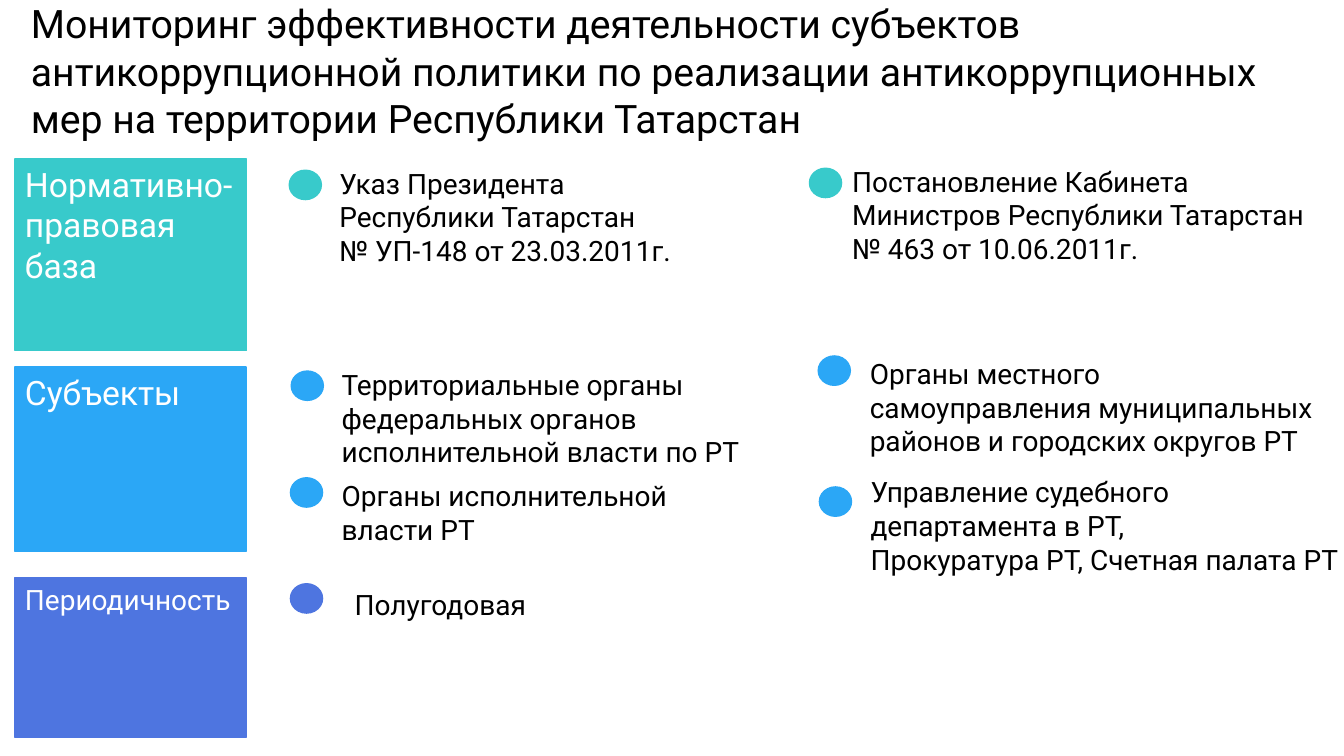
from pptx import Presentation
from pptx.dml.color import RGBColor
from pptx.enum.shapes import MSO_SHAPE
from pptx.enum.text import MSO_ANCHOR, PP_ALIGN
from pptx.util import Cm, Pt

RECT = MSO_SHAPE.RECTANGLE
SNIPPED = MSO_SHAPE.SNIP_2_DIAG_RECTANGLE
DOT = MSO_SHAPE.FLOWCHART_CONNECTOR
TOP = MSO_ANCHOR.TOP
MIDDLE = MSO_ANCHOR.MIDDLE
LEFT = PP_ALIGN.LEFT

FONT = "Roboto"
BLACK, WHITE = "000000", "FFFFFF"
TEAL, BLUE, INDIGO = "38CACB", "2BA7F6", "4E75E0"

TITLE = ("Мониторинг эффективности деятельности субъектов антикоррупционной "
         "политики по реализации антикоррупционных мер на территории "
         "Республики Татарстан")

SECTIONS = [
    ("Нормативно-правовая база", 4.01, 5.84, 4.83, 24, TEAL),
    ("Субъекты", 9.25, 5.82, 4.65, 24, BLUE),
    ("Периодичность", 14.55, 5.82, 4.04, 20, INDIGO),
]

DECREES = [
    ("Указ Президента\nРеспублики Татарстан\n№ УП-148 от 23.03.2011г.",
     7.98, 3.53, 11.76, 3.86),
    ("Постановление Кабинета Министров Республики Татарстан\n"
     "№ 463 от 10.06.2011г.",
     20.9, 3.45, 12.98, 3.91),
]

ITEMS = [
    ("Территориальные органы\nфедеральных органов\nисполнительной власти по РТ",
     8.36, 9.14, 14.53, 2.82),
    ("Органы исполнительной власти РТ", 8.36, 11.94, 10.31, 1.96),
    ("Органы местного самоуправления муниципальных районов "
     "и городских округов РТ",
     21.67, 8.86, 11.86, 3.68),
    ("Управление судебного департамента в РТ,\n"
     "Прокуратура РТ, Счетная палата РТ",
     21.69, 11.84, 12.32, 2.82),
    ("Полугодовая", 8.69, 14.68, 10.31, 1.12),
]

DOTS = [
    (7.29, 4.29, TEAL),
    (20.4, 4.24, TEAL),
    (7.34, 9.35, BLUE),
    (7.32, 12.04, BLUE),
    (20.62, 8.97, BLUE),
    (20.65, 12.27, BLUE),
    (7.32, 14.71, INDIGO),
]


def rgb(color):
    return RGBColor.from_string(color)


def write(sp, text, size, color, anchor=TOP):
    tf = sp.text_frame
    tf.word_wrap = True
    tf.vertical_anchor = anchor
    tf.text = text
    for p in tf.paragraphs:
        p.alignment = LEFT
        for r in p.runs:
            r.font.name = FONT
            r.font.size = Pt(size)
            r.font.color.rgb = rgb(color)


def add_text(s, text, x, y, w, h, size=20):
    sp = s.shapes.add_textbox(Cm(x), Cm(y), Cm(w), Cm(h))
    write(sp, text, size, BLACK)


def add_shape(s, kind, x, y, w, h, color=None):
    sp = s.shapes.add_shape(kind, Cm(x), Cm(y), Cm(w), Cm(h))
    sp.shadow.inherit = False
    if color:
        sp.fill.solid()
        sp.fill.fore_color.rgb = rgb(color)
        sp.line.color.rgb = rgb(color)
        sp.line.width = Pt(1)
    else:
        sp.fill.background()
        sp.line.fill.background()
    return sp


def main():
    prs = Presentation()
    prs.slide_width, prs.slide_height = Cm(33.87), Cm(19.05)
    s = prs.slides.add_slide(prs.slide_layouts[6])

    add_text(s, TITLE, 0.53, -0.13, 33.02, 3.84, 28)
    for text, y, w, h, size, color in SECTIONS:
        write(add_shape(s, RECT, 0.38, y, w, h, color), text, size, WHITE)
    for text, x, y, w, h in DECREES:
        write(add_shape(s, SNIPPED, x, y, w, h), text, 20, BLACK, MIDDLE)
    for text, x, y, w, h in ITEMS:
        add_text(s, text, x, y, w, h)
    for x, y, color in DOTS:
        add_shape(s, DOT, x, y, 0.81, 0.74, color)

    prs.save("out.pptx")


if __name__ == "__main__":
    main()
